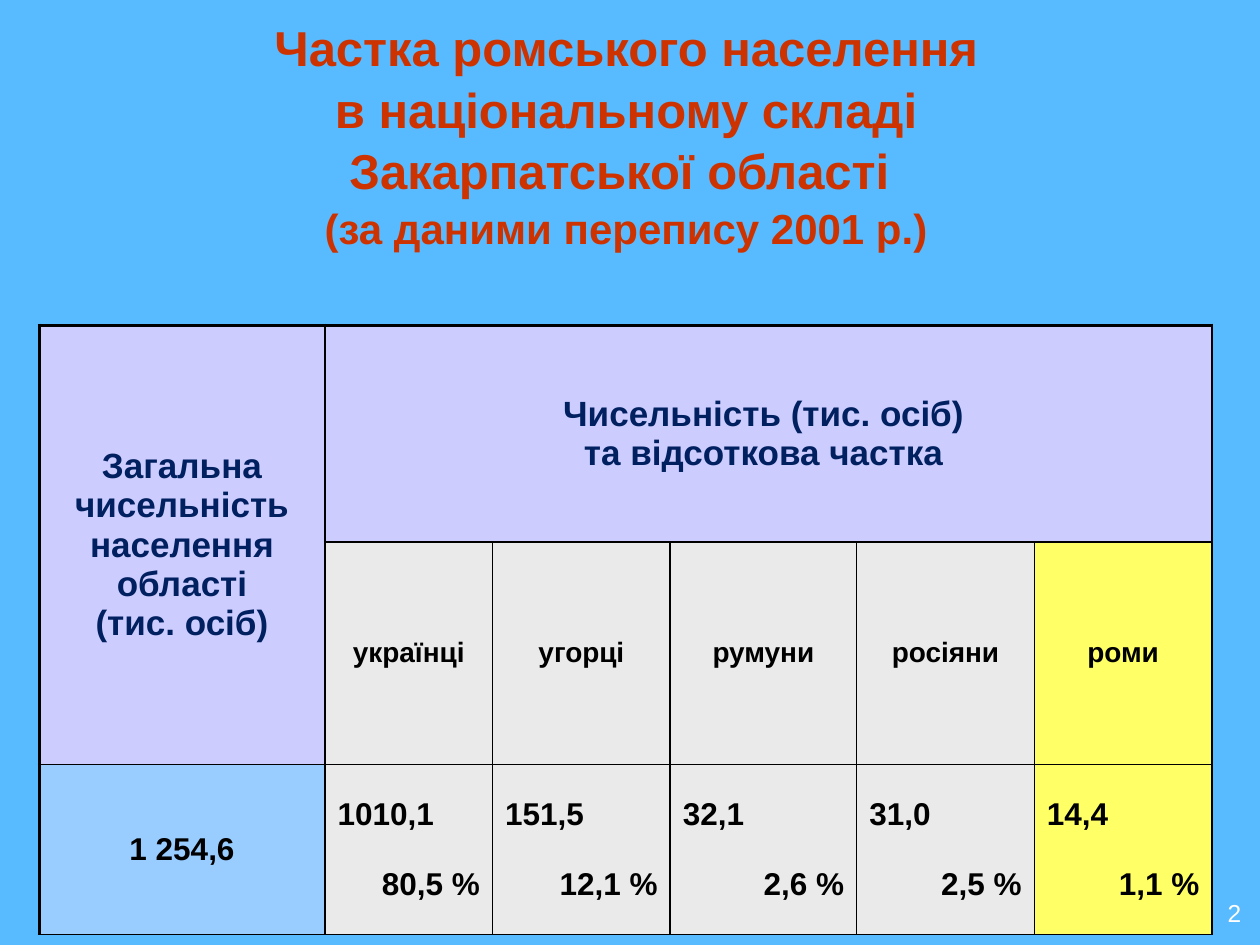
from lxml import etree
from pptx import Presentation
from pptx.dml.color import RGBColor
from pptx.enum import text
from pptx.oxml import ns
from pptx.util import Pt

# Content
TITLE = ["Частка ромського населення", "в національному складі", "Закарпатської області "]
SUBTITLE = "(за даними перепису 2001 р.)"
TOTAL_HEADING = ["Загальна чисельність населення області", "(тис. осіб)"]
GROUP_HEADING = ["Чисельність (тис. осіб) ", "та відсоткова частка "]
TOTAL = "1 254,6"
NATIONS = [
    ("українці", "1010,1", "80,5 %"),
    ("угорці", "151,5", "12,1 %"),
    ("румуни", "32,1", "2,6 %"),
    ("росіяни", "31,0", "2,5 %"),
    ("роми", "14,4", "1,1 %"),
]
SLIDE_NUMBER = "2"

COLORS = {
    "background": "58BBFF", "title": "CC3300", "heading": "002060", "text": "000000",
    "border": "000000", "number": "FFFFFF", "heading_fill": "CCCCFF",
    "total_fill": "99CCFF", "nation_fill": "EAEAEA", "roma_fill": "FFFF66",
}
COLUMN_WIDTHS = [163.4, 95.8, 101.5, 106.6, 101.5, 101.5]
ROW_HEIGHTS = [123.8, 56.2, 97.2]
LEFT, CENTER, RIGHT = text.PP_ALIGN.LEFT, text.PP_ALIGN.CENTER, text.PP_ALIGN.RIGHT


def color(name):
    return RGBColor.from_string(COLORS[name])


def set_font(font, size, name, bold=True):
    font.name, font.size, font.bold = "Arial", Pt(size), bold
    font.color.rgb = color(name)


def add_text_box(slide, left, top, width, height, anchor):
    frame = slide.shapes.add_textbox(Pt(left), Pt(top), Pt(width), Pt(height)).text_frame
    frame.word_wrap = True
    frame.vertical_anchor = anchor
    return frame


def fill_cell(cell, lines, fill, size, name="text", alignments=(CENTER, CENTER), gap=0):
    cell.fill.solid()
    cell.fill.fore_color.rgb = color(fill)
    cell.vertical_anchor = text.MSO_ANCHOR.MIDDLE
    cell.text_frame.text = "\n".join(lines)
    for index, paragraph in enumerate(cell.text_frame.paragraphs):
        paragraph.alignment = alignments[index]
        if index and gap:
            paragraph.space_before = Pt(gap)
        set_font(paragraph.font, size, name)


def set_borders(cell, widths):
    properties = cell._tc.get_or_add_tcPr()
    for index, (side, width) in enumerate(widths.items()):
        line = etree.Element(ns.qn(f"a:ln{side}"), w=str(Pt(width)))
        solid = etree.SubElement(line, ns.qn("a:solidFill"))
        etree.SubElement(solid, ns.qn("a:srgbClr"), val=COLORS["border"])
        properties.insert(index, line)


presentation = Presentation()
presentation.slide_width, presentation.slide_height = Pt(720), Pt(540)
slide = presentation.slides.add_slide(presentation.slide_layouts[6])
slide.background.fill.solid()
slide.background.fill.fore_color.rgb = color("background")

# Title
frame = add_text_box(slide, 33.8, 11.5, 648, 129.6, text.MSO_ANCHOR.MIDDLE)
paragraph = frame.paragraphs[0]
paragraph.alignment = CENTER
paragraph.line_spacing = 1.05
for line in TITLE:
    run = paragraph.add_run()
    run.text = line
    set_font(run.font, 28, "title")
    paragraph.add_line_break()
run = paragraph.add_run()
run.text = SUBTITLE
set_font(run.font, 24, "title")

# Table grid
table = slide.shapes.add_table(
    len(ROW_HEIGHTS), len(COLUMN_WIDTHS), Pt(22.3), Pt(185.8),
    Pt(sum(COLUMN_WIDTHS)), Pt(sum(ROW_HEIGHTS))).table
table.first_row = table.horz_banding = False
for column, width in zip(table.columns, COLUMN_WIDTHS):
    column.width = Pt(width)
for row, height in zip(table.rows, ROW_HEIGHTS):
    row.height = Pt(height)
table.cell(0, 0).merge(table.cell(1, 0))
table.cell(0, 1).merge(table.cell(0, len(NATIONS)))

# Table content
fill_cell(table.cell(0, 0), TOTAL_HEADING, "heading_fill", 20, "heading")
fill_cell(table.cell(0, 1), GROUP_HEADING, "heading_fill", 20, "heading")
fill_cell(table.cell(2, 0), [TOTAL], "total_fill", 18)
for column, (nation, count, share) in enumerate(NATIONS, start=1):
    fill = "roma_fill" if nation == "роми" else "nation_fill"
    fill_cell(table.cell(1, column), [nation], fill, 16)
    fill_cell(table.cell(2, column), [count, share], fill, 18,
              alignments=(LEFT, RIGHT), gap=20)

# Borders: thicker along the left and top edges
for row in range(len(ROW_HEIGHTS)):
    for column in range(len(COLUMN_WIDTHS)):
        set_borders(table.cell(row, column), {
            "L": 1 if column else 2, "R": 1, "T": 1 if row else 2, "B": 1})

# Slide number
frame = add_text_box(slide, 690.5, 510.5, 25.9, 23, text.MSO_ANCHOR.BOTTOM)
paragraph = frame.paragraphs[0]
paragraph.text = SLIDE_NUMBER
paragraph.alignment = RIGHT
set_font(paragraph.font, 14, "number", bold=False)

presentation.save("out.pptx")
